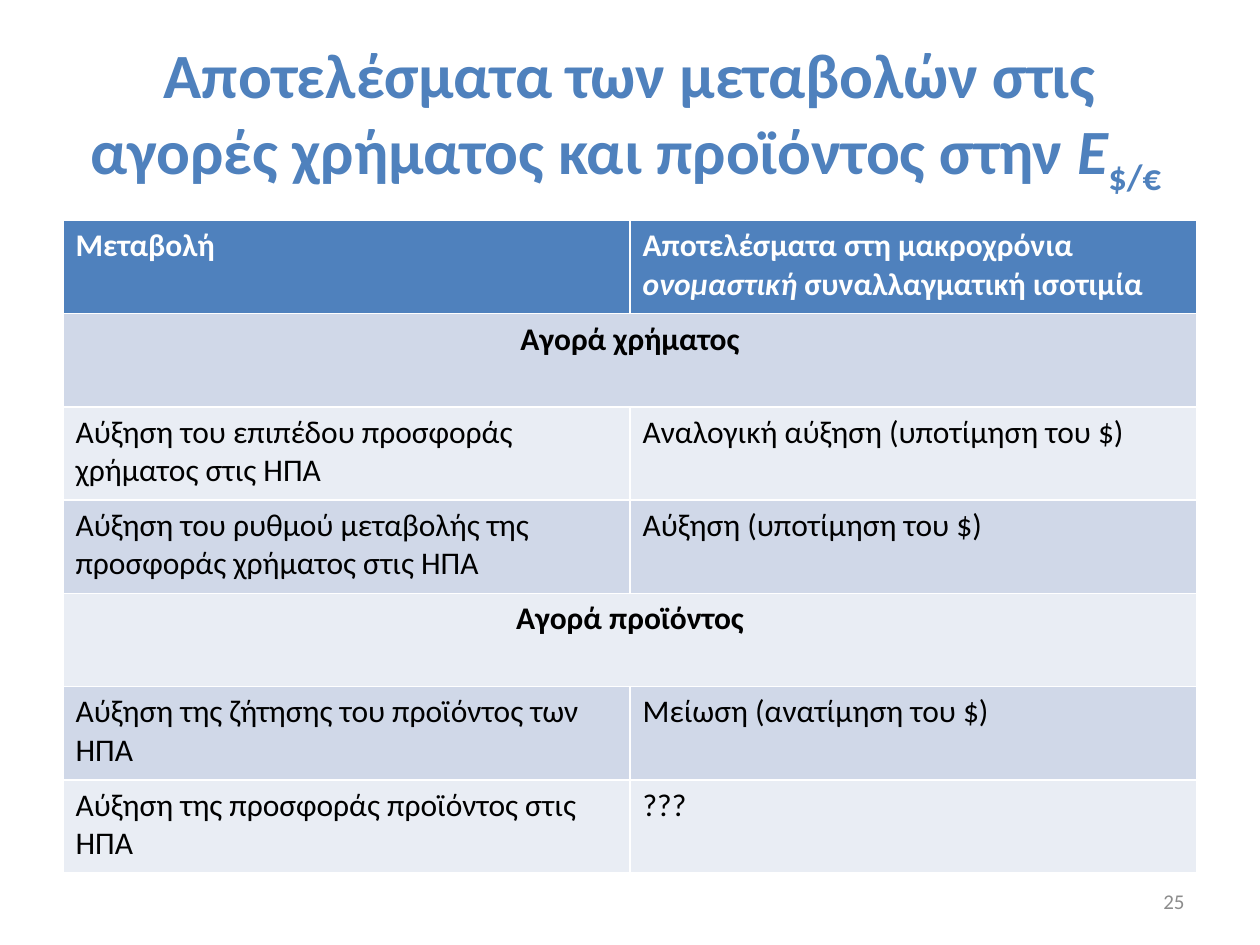
from pptx import Presentation
from pptx.dml.color import RGBColor
from pptx.enum.text import MSO_ANCHOR, MSO_AUTO_SIZE, PP_ALIGN
from pptx.util import Inches, Pt

FONT = "Calibri"
COLORS = {
    "accent": "4F81BD",
    "band_dark": "D0D8E8",
    "band_light": "E9EDF4",
    "white": "FFFFFF",
    "black": "000000",
    "number": "8C8C8C",
}
HEADER = (
    ["Μεταβολή"],
    ["Αποτελέσματα στη μακροχρόνια ", "ονομαστική", " συναλλαγματική ισοτιμία"],
)
ROWS = [
    ("Αγορά χρήματος",),
    ("Αύξηση του επιπέδου προσφοράς χρήματος στις ΗΠΑ",
     "Αναλογική αύξηση (υποτίμηση του $)"),
    ("Αύξηση του ρυθμού μεταβολής της προσφοράς χρήματος στις ΗΠΑ",
     "Αύξηση (υποτίμηση του $)"),
    ("Αγορά προϊόντος",),
    ("Αύξηση της ζήτησης του προϊόντος των ΗΠΑ", "Μείωση (ανατίμηση του $)"),
    ("Αύξηση της προσφοράς προϊόντος στις ΗΠΑ", "???"),
]


def rgb(name):
    return RGBColor.from_string(COLORS[name])


def write(p, parts, size, color, bold=False, align=PP_ALIGN.LEFT):
    p.alignment = align
    p.font.name = FONT
    p.font.size = Pt(size)
    p.font.bold = bold
    p.font.color.rgb = rgb(color)
    runs = []
    for text in parts:
        r = p.add_run()
        r.text = text
        runs.append(r)
    return runs


def add_title(s):
    sp = s.shapes.title
    sp.left, sp.top = Inches(0.5), Inches(0.3)
    sp.width, sp.height = Inches(9), Inches(1.25)
    tf = sp.text_frame
    tf.auto_size = MSO_AUTO_SIZE.NONE
    tf.vertical_anchor = MSO_ANCHOR.MIDDLE
    parts = [
        "Αποτελέσματα των μεταβολών στις αγορές χρήματος και προϊόντος στην ",
        "E",
        "$/€ ",
    ]
    _, symbol, subscript = write(
        tf.paragraphs[0], parts, 36, "accent", True, PP_ALIGN.CENTER)
    symbol.font.italic = True
    subscript.font._element.set("baseline", "-25000")


def fill_cell(cell, parts, fill, color="black", bold=False, align=PP_ALIGN.LEFT):
    cell.fill.solid()
    cell.fill.fore_color.rgb = rgb(fill)
    return write(cell.text_frame.paragraphs[0], parts, 18, color, bold, align)


def add_effects_table(s):
    count = len(ROWS) + 1
    row_height = Inches(0.74)
    table = s.shapes.add_table(
        count, 2, Inches(0.5), Inches(1.75), Inches(9), row_height * count).table
    for row in table.rows:
        row.height = row_height

    for col, parts in enumerate(HEADER):
        runs = fill_cell(table.cell(0, col), parts, "accent", "white", True)
        if len(runs) > 1:
            runs[1].font.italic = True

    for i, texts in enumerate(ROWS, start=1):
        band = "band_dark" if i % 2 else "band_light"
        if len(texts) == 1:
            cell = table.cell(i, 0)
            cell.merge(table.cell(i, 1))
            fill_cell(cell, texts, band, bold=True, align=PP_ALIGN.CENTER)
        else:
            for col, text in enumerate(texts):
                fill_cell(table.cell(i, col), [text], band)


def add_slide_number(s, number):
    sp = s.shapes.add_textbox(Inches(7.17), Inches(6.95), Inches(2.33), Inches(0.4))
    tf = sp.text_frame
    tf.word_wrap = True
    tf.vertical_anchor = MSO_ANCHOR.MIDDLE
    write(tf.paragraphs[0], [number], 12, "number", align=PP_ALIGN.RIGHT)


def main():
    prs = Presentation()
    prs.slide_width, prs.slide_height = Inches(10), Inches(7.5)
    s = prs.slides.add_slide(prs.slide_layouts[5])
    add_title(s)
    add_effects_table(s)
    add_slide_number(s, "25")
    prs.save("out.pptx")


if __name__ == "__main__":
    main()
